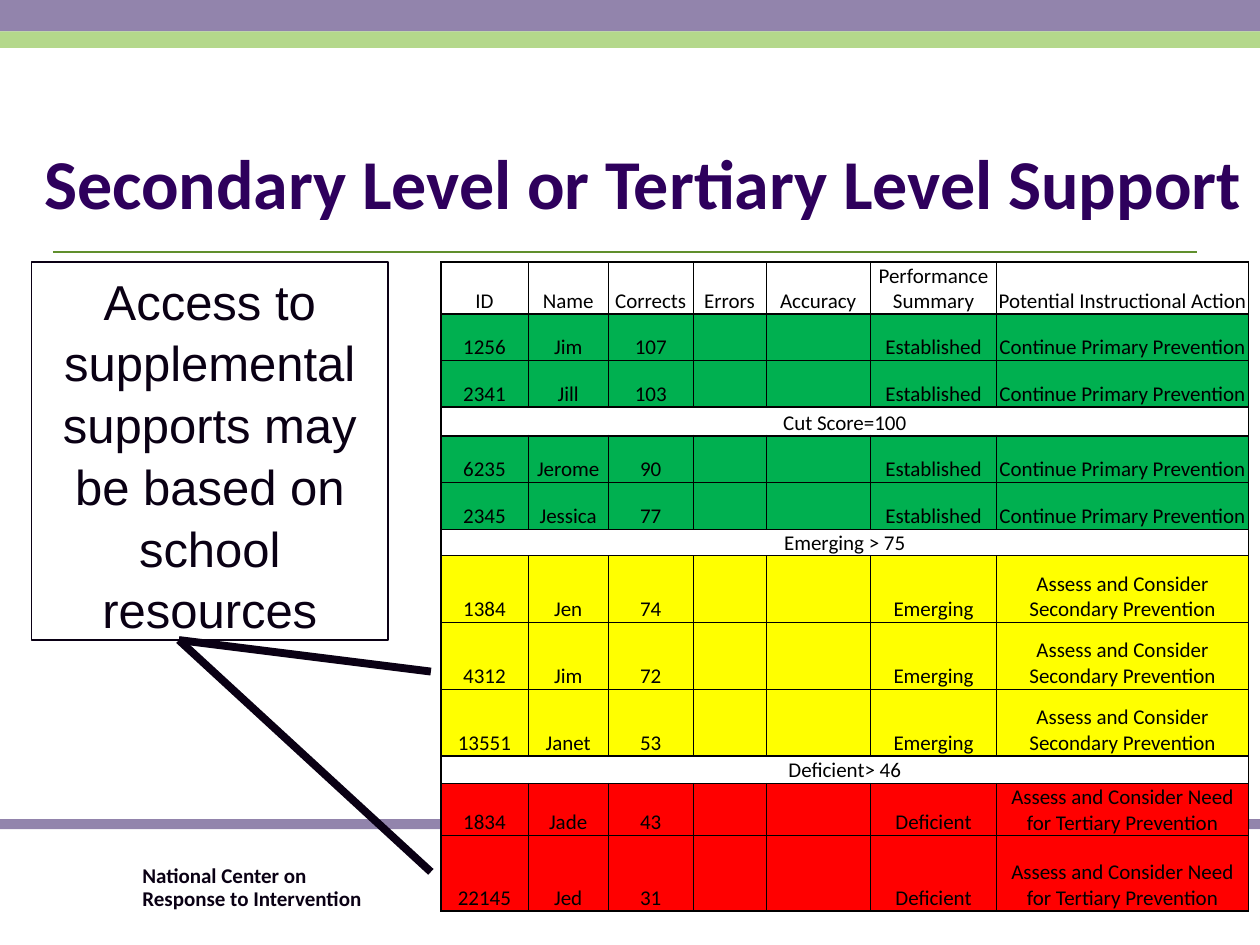
from dataclasses import dataclass
from itertools import pairwise

from lxml import etree
from pptx import Presentation
from pptx.dml.color import RGBColor
from pptx.enum.shapes import MSO_CONNECTOR, MSO_SHAPE
from pptx.enum.text import MSO_ANCHOR, MSO_AUTO_SIZE, PP_ALIGN
from pptx.oxml.ns import qn
from pptx.util import Inches, Pt

RECTANGLE = MSO_SHAPE.RECTANGLE
STRAIGHT = MSO_CONNECTOR.STRAIGHT
TOP, BOTTOM = MSO_ANCHOR.TOP, MSO_ANCHOR.BOTTOM
LEFT, CENTER = PP_ALIGN.LEFT, PP_ALIGN.CENTER
NO_AUTOFIT = MSO_AUTO_SIZE.NONE


@dataclass(frozen=True)
class Theme:
    purple: str = "9284AC"
    lime: str = "B4D88B"
    rule: str = "608F2D"
    heading: str = "2E005C"
    ink: str = "0A0014"
    black: str = "000000"
    white: str = "FFFFFF"
    established: str = "00B050"
    emerging: str = "FFFF00"
    deficient: str = "FF0000"
    body_font: str = "Calibri"
    callout_font: str = "Arial"
    title_size: int = 40
    callout_size: int = 28
    small_size: int = 12


THEME = Theme()

COLUMN_WIDTHS = [0.69, 0.64, 0.67, 0.58, 0.83, 1, 2]
HEADERS = ["ID", "Name", "Corrects", "Errors", "Accuracy",
           "Performance Summary", "Potential Instructional Action"]
LEVELS = {
    "Established": (THEME.established, "Continue Primary Prevention"),
    "Emerging": (THEME.emerging, "Assess and Consider Secondary Prevention"),
    "Deficient": (THEME.deficient, "Assess and Consider Need for Tertiary Prevention"),
}
# Row height, then either a cut-score label or a student's ID, name, corrects and level
STUDENT_ROWS = [
    (0.37, "1256", "Jim", "107", "Established"),
    (0.37, "2341", "Jill", "103", "Established"),
    (0.23, "Cut Score=100"),
    (0.37, "6235", "Jerome", "90", "Established"),
    (0.37, "2345", "Jessica", "77", "Established"),
    (0.21, "Emerging > 75"),
    (0.53, "1384", "Jen", "74", "Emerging"),
    (0.53, "4312", "Jim", "72", "Emerging"),
    (0.53, "13551", "Janet", "53", "Emerging"),
    (0.22, "Deficient> 46"),
    (0.41, "1834", "Jade", "43", "Deficient"),
    (0.6, "22145", "Jed", "31", "Deficient"),
]
HEADER_HEIGHT = 0.41
# Widths of the horizontal borders, from the table's top edge to its bottom edge
ROW_BORDERS = [1, 1, 0.5, 1.5, 1.5, 0.5, 0.5, 0.5, 0.5, 0.5, 1, 1, 0.5, 1]
COLUMN_BORDERS = [1] + [0.5] * (len(COLUMN_WIDTHS) - 1) + [1]


def rgb(color):
    return RGBColor.from_string(color)


def set_all(target, formats):
    for name, value in formats.items():
        setattr(target, name, value)


def write_text(frame, text, size, color, font=THEME.body_font, bold=False,
               align=LEFT, spacing=1.0):
    frame.text = text
    for para in frame.paragraphs:
        set_all(para, {"alignment": align, "line_spacing": spacing})
        for span in para.runs:
            set_all(span.font, {"size": Pt(size), "name": font, "bold": bold})
            span.font.color.rgb = rgb(color)


def add_bar(page, top, height, color):
    bar = page.shapes.add_shape(RECTANGLE, 0, Inches(top), Inches(10), Inches(height))
    bar.shadow.inherit = False
    bar.fill.solid()
    bar.fill.fore_color.rgb = rgb(color)
    bar.line.fill.background()


def add_line(page, start, end, color, width):
    points = [Inches(value) for value in (*start, *end)]
    line = page.shapes.add_connector(STRAIGHT, *points)
    line.line.color.rgb = rgb(color)
    line.line.width = Pt(width)
    etree.SubElement(line._element.spPr, qn("a:effectLst"))


def add_title(page, text):
    title = page.shapes.title
    set_all(title, {"left": Inches(0.25), "top": Inches(0.58),
                    "width": Inches(9.75), "height": Inches(1.25)})
    set_all(title.text_frame, {"vertical_anchor": BOTTOM, "word_wrap": True,
                               "auto_size": NO_AUTOFIT})
    write_text(title.text_frame, text, THEME.title_size, THEME.heading,
               bold=True, spacing=0.9)


def add_footer(page, text):
    box = page.shapes.add_textbox(Inches(1.09), Inches(6.83), Inches(3.24), Inches(0.3))
    margin = Inches(0.04)
    set_all(box.text_frame, {"word_wrap": True, "margin_left": margin, "margin_top": margin,
                             "margin_right": margin, "margin_bottom": margin})
    write_text(box.text_frame, text, THEME.small_size, THEME.ink, bold=True, spacing=0.9)


def add_callout(page, text):
    box = page.shapes.add_shape(RECTANGLE, Inches(0.25), Inches(2.08),
                                Inches(2.83), Inches(3))
    box.shadow.inherit = False
    box.fill.background()
    box.line.color.rgb = rgb(THEME.ink)
    box.line.width = Pt(0.75)
    set_all(box.text_frame, {"vertical_anchor": TOP, "word_wrap": True})
    write_text(box.text_frame, text, THEME.callout_size, THEME.ink,
               font=THEME.callout_font, align=CENTER, spacing=1.05)


def set_borders(cell, widths):
    properties = cell._tc.get_or_add_tcPr()
    for position, (side, width) in enumerate(zip(("a:lnL", "a:lnR", "a:lnT", "a:lnB"), widths)):
        line = etree.Element(qn(side), w=str(Pt(width)))
        fill = etree.SubElement(line, qn("a:solidFill"))
        etree.SubElement(fill, qn("a:srgbClr"), val=THEME.black)
        properties.insert(position, line)


def fill_cell(cell, text, color, borders):
    margin = Inches(0.01)
    set_all(cell, {"margin_left": margin, "margin_top": margin, "margin_right": margin,
                   "margin_bottom": 0, "vertical_anchor": BOTTOM})
    cell.fill.solid()
    cell.fill.fore_color.rgb = rgb(color)
    write_text(cell.text_frame, text, THEME.small_size, THEME.black, align=CENTER)
    set_borders(cell, borders)


def table_rows():
    """Give each row's height, texts and fill."""
    yield HEADER_HEIGHT, HEADERS, THEME.white
    for height, *values in STUDENT_ROWS:
        if len(values) == 1:
            yield height, values, THEME.white
        else:
            *student, level = values
            color, action = LEVELS[level]
            yield height, [*student, "", "", level, action], color


def add_score_table(page):
    rows = list(table_rows())
    last = len(COLUMN_WIDTHS) - 1
    frame = page.shapes.add_table(len(rows), last + 1, Inches(3.5), Inches(2.08),
                                  Inches(sum(COLUMN_WIDTHS)),
                                  Inches(sum(row[0] for row in rows)))
    table = frame.table
    set_all(table, {"first_row": False, "horz_banding": False})
    for column, width in zip(table.columns, COLUMN_WIDTHS):
        column.width = Inches(width)

    # The action column has a heavier line between two green rows
    action_borders = list(ROW_BORDERS)
    for index, (above, below) in enumerate(pairwise(rows), start=1):
        if above[2] == below[2] == THEME.established:
            action_borders[index] = 1

    for row, (height, texts, color) in enumerate(rows):
        table.rows[row].height = Inches(height)
        if len(texts) == 1:
            table.cell(row, 0).merge(table.cell(row, last))
        for column in range(last + 1):
            text = texts[column] if column < len(texts) else ""
            horizontal = action_borders if column == last else ROW_BORDERS
            right = last + 1 if len(texts) == 1 else column + 1
            borders = (COLUMN_BORDERS[column], COLUMN_BORDERS[right],
                       horizontal[row], horizontal[row + 1])
            fill_cell(table.cell(row, column), text, color, borders)


def main():
    deck = Presentation()
    set_all(deck, {"slide_width": Inches(10), "slide_height": Inches(7.5)})
    page = deck.slides.add_slide(deck.slide_layouts[5])

    # Bands, footer and rule
    add_bar(page, 6.5, 0.08, THEME.purple)
    add_bar(page, 0, 0.25, THEME.purple)
    add_bar(page, 0.25, 0.13, THEME.lime)
    add_footer(page, "National Center on\vResponse to Intervention")
    add_line(page, (0.42, 2), (9.5, 2), THEME.rule, 0.75)

    add_title(page, "Secondary Level or Tertiary Level Support")

    # Callout with pointers to the emerging and deficient students
    for target in ((3.42, 6.92), (3.42, 5.33)):
        add_line(page, target, (1.42, 5.08), THEME.ink, 4.5)
    add_callout(page, "Access to supplemental supports may be based on school resources")

    add_score_table(page)
    deck.save("out.pptx")


if __name__ == "__main__":
    main()
